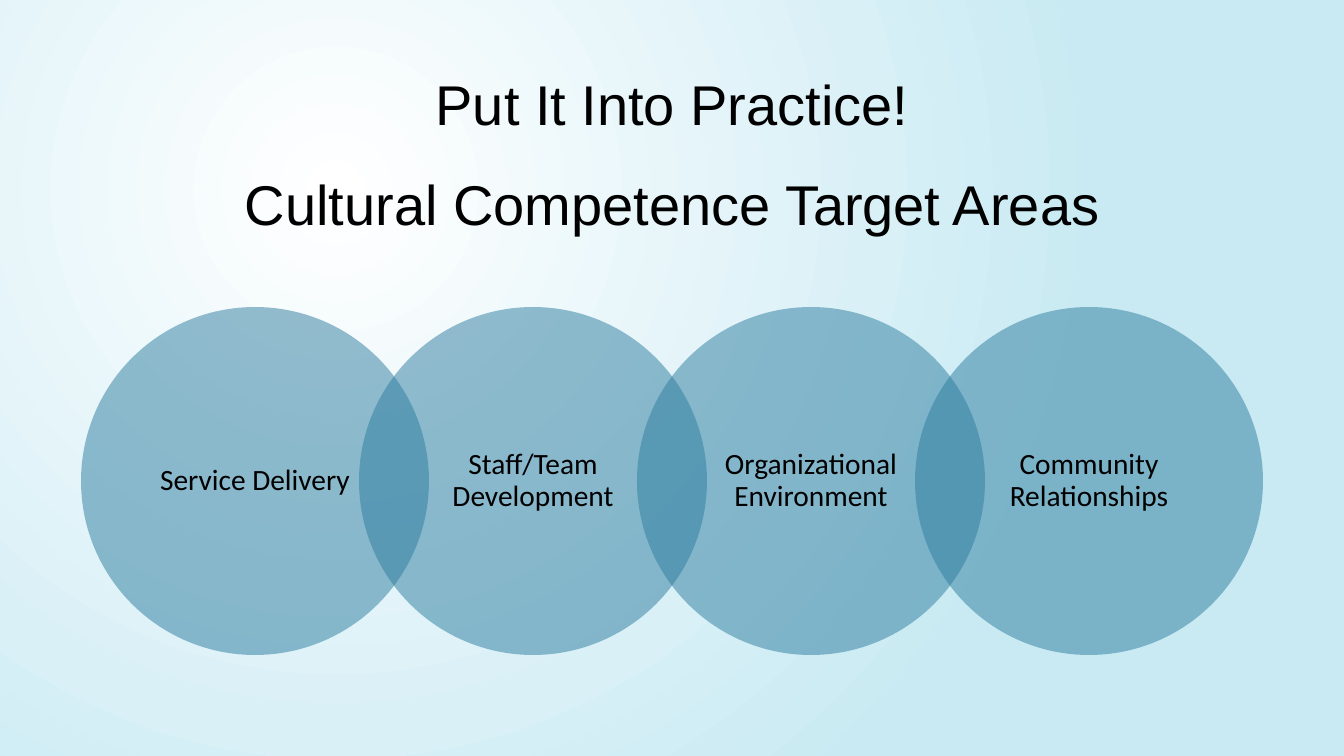
from pptx import Presentation
from pptx import util as u
from pptx.dml.color import RGBColor
from pptx.enum import shapes, text
from pptx.oxml import parse_xml
from pptx.oxml.ns import nsdecls, qn

EMU_PER_PX = 914400 / 100.8
COLORS = {"center": "FFFFFF", "edge": "C9EAF3", "circle": "2C7C9F", "text": "000000"}
TITLE = "Put It Into Practice!\vCultural Competence Target Areas"
TARGET_AREAS = [
    "Service Delivery",
    "Staff/Team Development",
    "Organizational Environment",
    "Community Relationships",
]
LEFT, CIRCLE_TOP, DIAMETER = 81, 307, 348
STEP = DIAMETER * 4 // 5


def px(length):
    return u.Emu(round(length * EMU_PER_PX))


def color(name):
    return RGBColor.from_string(COLORS[name])


def paint_background(slide):
    """Fill the slide with a circular gradient centred a quarter in from the top left."""
    fill = slide.background.fill
    fill.gradient()
    for stop, position, name in zip(fill.gradient_stops, (0, 1), ("center", "edge")):
        stop.position = position
        stop.color.rgb = color(name)
    linear = slide.element.find(".//" + qn("a:lin"))
    circular = parse_xml(
        f'<a:path {nsdecls("a")} path="circle">'
        '<a:fillToRect l="50000" t="50000" r="100000" b="100000"/></a:path>'
    )
    linear.getparent().replace(linear, circular)


def write_text(shape, wording, font_name, size, line_spacing, anchor):
    frame = shape.text_frame
    frame.word_wrap = True
    frame.vertical_anchor = anchor
    paragraph = frame.paragraphs[0]
    paragraph.text = wording
    paragraph.alignment = text.PP_ALIGN.CENTER
    paragraph.line_spacing = line_spacing
    paragraph.font.name = font_name
    paragraph.font.size = u.Pt(size)
    paragraph.font.color.rgb = color("text")


def add_title(slide):
    box = slide.shapes.add_textbox(px(LEFT), px(83), px(1182), px(159))
    write_text(box, TITLE, "Arial", 40, 1.5, text.MSO_ANCHOR.BOTTOM)


def add_circle(slide, left, wording):
    circle = slide.shapes.add_shape(
        shapes.MSO_SHAPE.OVAL, px(left), px(CIRCLE_TOP), px(DIAMETER), px(DIAMETER)
    )
    circle.shadow.inherit = False
    circle.line.fill.background()
    circle.fill.solid()
    circle.fill.fore_color.rgb = color("circle")
    fill_color = circle.element.spPr.find(".//" + qn("a:srgbClr"))
    fill_color.append(parse_xml(f'<a:alpha {nsdecls("a")} val="50000"/>'))
    frame = circle.text_frame
    frame.margin_left = frame.margin_right = px(19)
    frame.margin_top = frame.margin_bottom = px(3)
    write_text(circle, wording, "Calibri", 21, 0.9, text.MSO_ANCHOR.MIDDLE)


def main():
    presentation = Presentation()
    presentation.slide_width = px(1344)
    presentation.slide_height = px(756)
    slide = presentation.slides.add_slide(presentation.slide_layouts[6])
    paint_background(slide)
    add_title(slide)
    for index, area in enumerate(TARGET_AREAS):
        add_circle(slide, LEFT + index * STEP, area)
    presentation.save("out.pptx")


if __name__ == "__main__":
    main()
